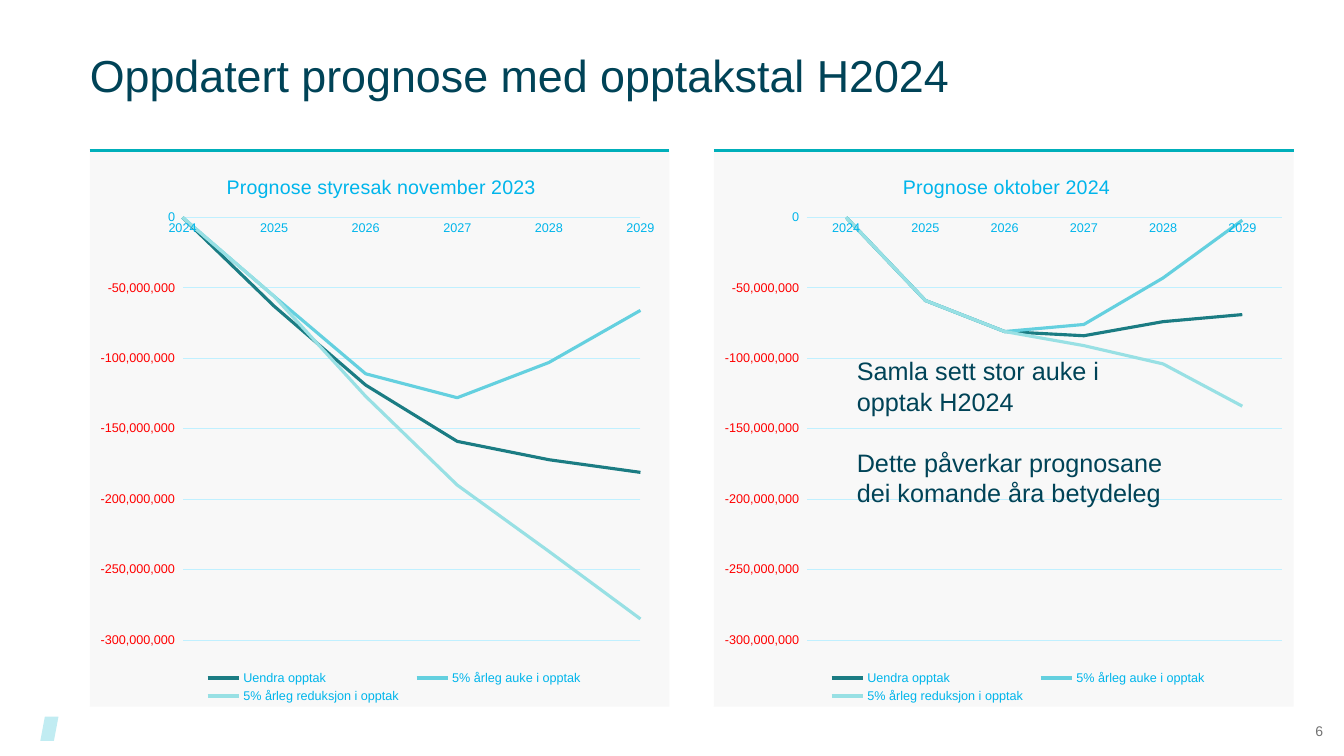
from lxml import etree
from pptx import Presentation, util as u
from pptx.chart.data import CategoryChartData
from pptx.dml.color import RGBColor
from pptx.enum import chart as charts, shapes, text
from pptx.oxml import parse_xml
from pptx.oxml.ns import nsdecls, qn

PX = 9144
NAVY, BLUE, PALE = "004357", "00B5EB", "C0F0FF"
MILLION = 1_000_000


def color(value):
    return RGBColor.from_string(value)


def place(element, index, x, y, w=None, h=None):
    for old in element.findall(qn("c:layout")):
        element.remove(old)
    inner = '<c:layoutTarget val="inner"/>' if element.tag == qn("c:plotArea") else ""
    modes = '<c:xMode val="edge"/><c:yMode val="edge"/>'
    sizes = "".join(f'<c:{key} val="{value}"/>' for key, value in zip("xywh", (x, y, w, h)) if value)
    element.insert(index, parse_xml(
        f'<c:layout {nsdecls("c")}><c:manualLayout>{inner}{modes}{sizes}</c:manualLayout></c:layout>'))


deck = Presentation()
deck.slide_width, deck.slide_height = 1333 * PX, 750 * PX
page = deck.slides.add_slide(deck.slide_layouts[5])

title = page.shapes.title
title.left, title.top, title.width, title.height = 89 * PX, 0, 1195 * PX, 148 * PX
title.text_frame.text = "Oppdatert prognose med opptakstal H2024"

series_colors = {
    "Uendra opptak": "1B7C83",
    "5% årleg auke i opptak": "64D0DF",
    "5% årleg reduksjon i opptak": "98E0E4",
}
forecasts = [
    (89, "Prognose styresak november 2023", 0.23, 0.79, "midCat", [
        (0, -63, -119, -159, -172, -181),
        (0, -56, -111, -128, -103, -66),
        (0, -56, -127, -190, -237, -285)]),
    (708, "Prognose oktober 2024", 0.32, 0.82, "between", [
        (0, -59, -81, -84, -74, -69),
        (0, -59, -81, -76, -43, -2),
        (0, -59, -81, -91, -104, -134)]),
]

for left, heading, heading_x, plot_width, crossing, rows in forecasts:
    panel = page.shapes.add_shape(
        shapes.MSO_SHAPE.RECTANGLE, left * PX, 148 * PX, 575 * PX, 553 * PX)
    panel.shadow.inherit = False
    panel.fill.solid()
    panel.fill.fore_color.rgb = color("F2F2F2")
    fill_color = panel._element.spPr.find(".//" + qn("a:srgbClr"))
    etree.SubElement(fill_color, qn("a:alpha"), val="50000")
    panel.line.fill.background()

    rule = page.shapes.add_connector(
        shapes.MSO_CONNECTOR.STRAIGHT, left * PX, 149 * PX, (left + 575) * PX, 149 * PX)
    rule.line.color.rgb = color("00AFBA")
    rule.line.width = u.Pt(2)
    etree.SubElement(rule._element.spPr, qn("a:effectLst"))

    data = CategoryChartData()
    data.categories = [str(year) for year in range(2024, 2030)]
    for name, row in zip(series_colors, rows):
        data.add_series(name, [value * MILLION for value in row])
    chart = page.shapes.add_chart(
        charts.XL_CHART_TYPE.LINE, left * PX, 147 * PX, 575 * PX, 554 * PX, data).chart
    chart.font.name, chart.font.size = "Arial", u.Pt(10)
    chart.font.color.rgb = color(NAVY)

    chart.has_title = True
    chart.chart_title.text_frame.text = heading
    span = chart.chart_title.text_frame.paragraphs[0].runs[0]
    span.font.name, span.font.size, span.font.bold = "Arial", u.Pt(14), False
    span.font.color.rgb = color(BLUE)
    place(chart.chart_title._element, 1, heading_x, 0.04)

    chart.has_legend = True
    chart.legend.position = charts.XL_LEGEND_POSITION.BOTTOM
    chart.legend.include_in_layout = False
    place(chart.legend._element, 1, 0.18, 0.93, 0.69, 0.07)

    years, amounts = chart.category_axis, chart.value_axis
    for font in (chart.legend.font, years.tick_labels.font, amounts.tick_labels.font):
        font.name, font.size = "Arial", u.Pt(9)
        font.color.rgb = color(BLUE)
    for axis in (years, amounts):
        axis.major_tick_mark = axis.minor_tick_mark = charts.XL_TICK_MARK.NONE
    amounts.minimum_scale, amounts.maximum_scale = -300 * MILLION, 0
    amounts.major_unit = 50 * MILLION
    amounts.tick_labels.number_format = r"#,##0_ ;[Red]\-#,##0\ "
    amounts.tick_labels.number_format_is_linked = False
    amounts.format.line.fill.background()
    for line in (years.format.line, amounts.major_gridlines.format.line):
        line.color.rgb = color(PALE)
        line.width = u.Pt(0.75)
    amounts._element.find(qn("c:crosses")).addnext(
        parse_xml(f'<c:crossBetween {nsdecls("c")} val="{crossing}"/>'))
    place(chart._chartSpace.chart.plotArea, 0, 0.16, 0.124, plot_width, 0.757)

    for series, line_color in zip(chart.plots[0].series, series_colors.values()):
        series.smooth = False
        series.marker.style = charts.XL_MARKER_STYLE.NONE
        series.format.line.color.rgb = color(line_color)
        series.format.line.width = u.Pt(2.25)

emblem = page.shapes.add_shape(
    shapes.MSO_SHAPE.PARALLELOGRAM, 40 * PX, 711 * PX, 18 * PX, 24 * PX)
emblem.shadow.inherit = False
emblem.fill.solid()
emblem.fill.fore_color.rgb = color("C1ECF2")
emblem.line.fill.background()

comment = page.shapes.add_textbox(840 * PX, 348 * PX, 340 * PX, 162 * PX)
comment.text_frame.text = (
    "Samla sett stor auke i opptak H2024\nDette påverkar prognosane dei komande åra betydeleg")
comment.text_frame.paragraphs[1].space_before = u.Pt(22)

number = page.shapes.add_textbox(1284 * PX, 701 * PX, 49 * PX, 49 * PX)
number.text_frame.text = "6"

for box, size, text_color, align in (
        (title, 32, NAVY, text.PP_ALIGN.LEFT),
        (comment, 18, NAVY, text.PP_ALIGN.LEFT),
        (number, 10, "737373", text.PP_ALIGN.CENTER)):
    frame = box.text_frame
    frame.word_wrap = True
    if box is not comment:
        frame.vertical_anchor = text.MSO_ANCHOR.MIDDLE
        frame.margin_left = frame.margin_top = frame.margin_right = frame.margin_bottom = 0
    for para in frame.paragraphs:
        para.alignment = align
        for span in para.runs:
            span.font.name, span.font.size = "Arial", u.Pt(size)
            span.font.color.rgb = color(text_color)

deck.save("out.pptx")
